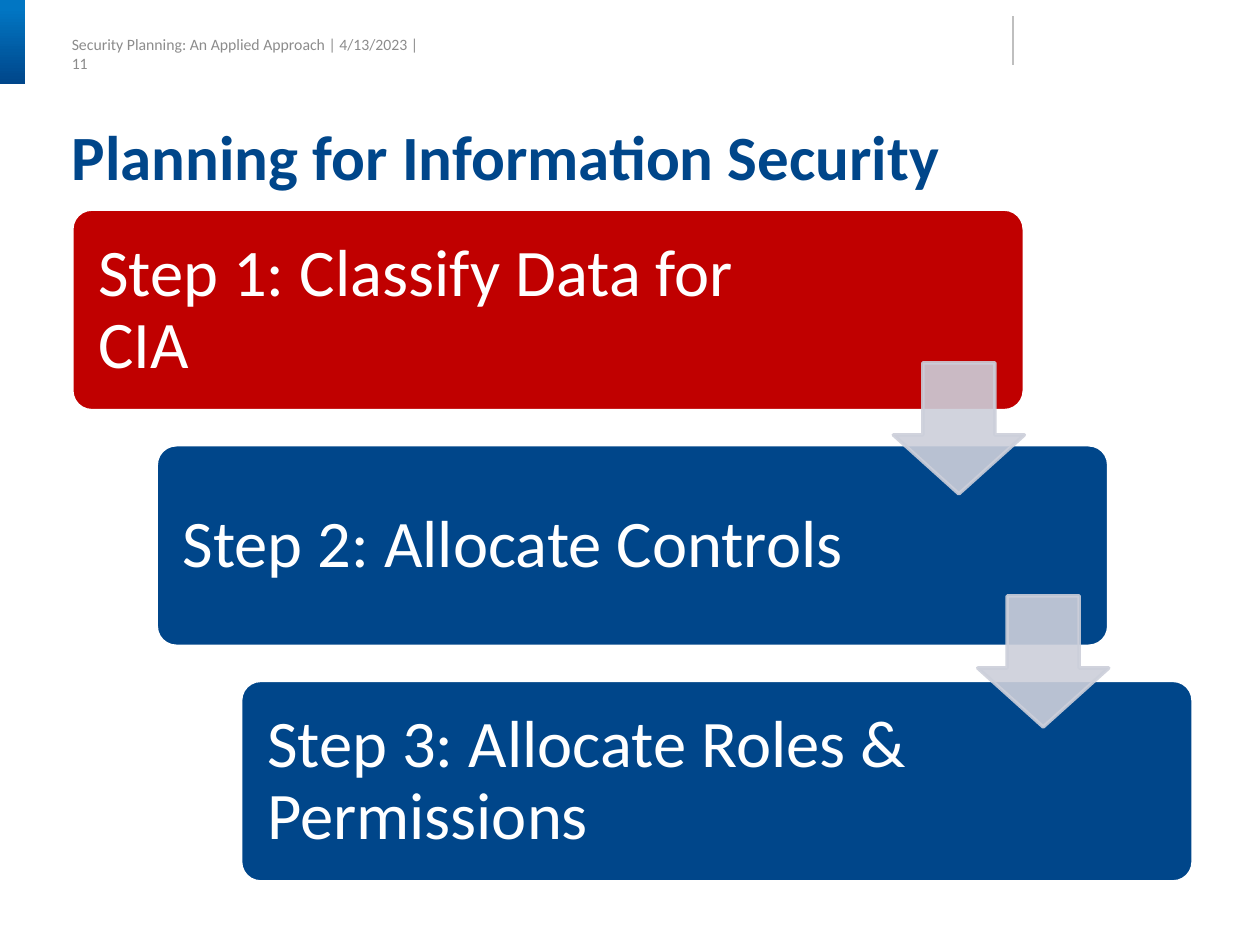
from lxml import etree
from pptx import Presentation
from pptx.dml.color import RGBColor
from pptx.enum.shapes import MSO_CONNECTOR, MSO_SHAPE
from pptx.enum.text import MSO_ANCHOR, PP_ALIGN
from pptx.oxml.ns import qn
from pptx.util import Inches, Pt

ROUNDED = MSO_SHAPE.ROUNDED_RECTANGLE
RECTANGLE = MSO_SHAPE.RECTANGLE
DOWN_ARROW = MSO_SHAPE.DOWN_ARROW
STRAIGHT = MSO_CONNECTOR.STRAIGHT
TOP = MSO_ANCHOR.TOP
MIDDLE = MSO_ANCHOR.MIDDLE
LEFT = PP_ALIGN.LEFT

COLORS = {
    "navy": "00468A",
    "blue": "0176C3",
    "red": "C00000",
    "white": "FFFFFF",
    "gray": "8C8C8C",
    "rule": "BFBFBF",
    "arrow": "CCCFDA",
}
STEPS = [
    ("Step 1: Classify Data for CIA", "red", 5.84),
    ("Step 2: Allocate Controls", "navy", 5.76),
    ("Step 3: Allocate Roles & Permissions", "navy", 5.76),
]
STEP_LEFT, STEP_TOP = 0.57, 1.66
STEP_WIDTH, STEP_HEIGHT = 7.56, 1.6
SHIFT_RIGHT, SHIFT_DOWN = 0.67, 1.87
ARROW_LEFT, ARROW_TOP, ARROW_SIZE, ARROW_DOWN = 7.09, 2.88, 1.04, 1.85


def rgb(name):
    return RGBColor.from_string(COLORS[name])


def add_text(page, area, text, size, color, insets=(0, 0, 0, 0), anchor=TOP,
             bold=False, wrap=True, spacing=None):
    box = page.shapes.add_textbox(*map(Inches, area))
    frame = box.text_frame
    frame.word_wrap = wrap
    frame.vertical_anchor = anchor
    (frame.margin_left, frame.margin_top,
     frame.margin_right, frame.margin_bottom) = map(Inches, insets)
    para = frame.paragraphs[0]
    para.alignment = LEFT
    if spacing:
        para.line_spacing = spacing
    span = para.add_run()
    span.text = text
    span.font.name = "Calibri"
    span.font.size = Pt(size)
    span.font.bold = bold
    span.font.color.rgb = rgb(color)


def add_shape(page, kind, area, fill, line, adjustments):
    shape = page.shapes.add_shape(kind, *map(Inches, area))
    shape.shadow.inherit = False
    for index, value in enumerate(adjustments):
        shape.adjustments[index] = value
    shape.fill.solid()
    shape.fill.fore_color.rgb = rgb(fill)
    shape.line.color.rgb = rgb(line)
    shape.line.width = Pt(2)
    return shape


def add_step(page, index, text, fill, text_width):
    left = STEP_LEFT + index * SHIFT_RIGHT
    top = STEP_TOP + index * SHIFT_DOWN
    add_shape(page, ROUNDED, (left, top, STEP_WIDTH, STEP_HEIGHT),
              fill, "white", [0.1])
    add_text(page, (left + 0.05, top + 0.05, text_width, 1.51), text, 38,
             "white", insets=(0.16,) * 4, anchor=MIDDLE, spacing=0.9)


def add_arrow(page, index):
    left = ARROW_LEFT + index * SHIFT_RIGHT
    top = ARROW_TOP + index * ARROW_DOWN
    arrow = add_shape(page, DOWN_ARROW, (left, top, ARROW_SIZE, ARROW_SIZE),
                      "arrow", "arrow", [0.55, 0.45])
    for color in arrow._element.spPr.iter(qn("a:srgbClr")):
        etree.SubElement(color, qn("a:alpha"), val="90000")


def add_corner_bar(page):
    bar = page.shapes.add_shape(RECTANGLE, 0, 0, Inches(0.2), Inches(0.67))
    bar.shadow.inherit = False
    bar.line.fill.background()
    bar.fill.gradient()
    bar.fill.gradient_angle = 270
    stops = [(0.1, "blue"), (1, "navy")]
    for stop, (position, color) in zip(bar.fill.gradient_stops, stops):
        stop.position = position
        stop.color.rgb = rgb(color)


def add_header_rule(page):
    rule = page.shapes.add_connector(
        STRAIGHT, Inches(8.04), Inches(0.13), Inches(8.04), Inches(0.52))
    rule.line.color.rgb = rgb("rule")
    rule.line.width = Pt(0.75)
    etree.SubElement(rule._element.spPr, qn("a:effectLst"))


def main():
    deck = Presentation()
    deck.slide_width, deck.slide_height = Inches(10), Inches(7.5)
    page = deck.slides.add_slide(deck.slide_layouts[6])
    add_text(page, (0.57, 0.23, 2.84, 0.23),
             "Security Planning: An Applied Approach | 4/13/2023 | 11", 9,
             "gray", insets=(0, 0.2, 0, 0.04), anchor=MIDDLE, wrap=False)
    add_corner_bar(page)
    add_header_rule(page)
    for index, step in enumerate(STEPS):
        add_step(page, index, *step)
    for index in range(len(STEPS) - 1):
        add_arrow(page, index)
    add_text(page, (0.57, 1, 8.92, 0.55), "Planning for Information Security",
             36, "navy", bold=True, spacing=0.9)
    deck.save("out.pptx")


if __name__ == "__main__":
    main()
